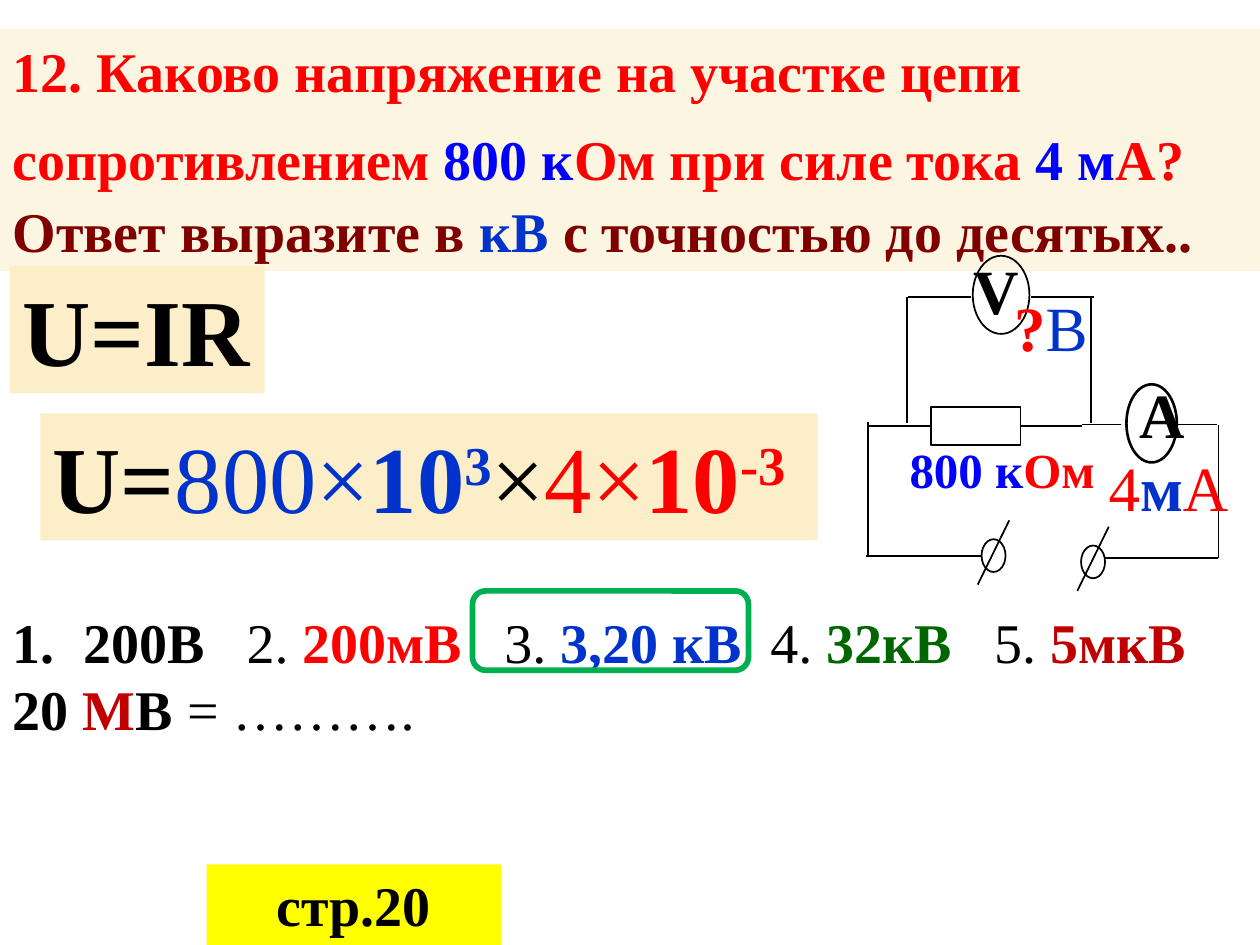
import pptx
import pptx.util
import pptx.dml.color
import pptx.enum.shapes
import pptx.enum.text
import pptx.oxml
import pptx.oxml.ns

Inches = pptx.util.Inches
Pt = pptx.util.Pt
KIND = pptx.enum.shapes.MSO_SHAPE
ALIGN = pptx.enum.text.PP_ALIGN
ANCHOR = pptx.enum.text.MSO_ANCHOR
FONT = "Times New Roman"
BLACK, RED, BLUE, NAVY = "000000", "FF0000", "0000FF", "0033CC"
MAROON, GREEN, BRICK = "800000", "006600", "C00000"
CREAM = "FBEEC9"


def color(code):
    return pptx.dml.color.RGBColor.from_string(code)


def element(parent, tag, **attrs):
    node = pptx.oxml.ns.qn("a:" + tag)
    child = parent.makeelement(node, attrs)
    parent.append(child)
    return child


def place(shape, left, top, width, height):
    shape.left, shape.top = Inches(left), Inches(top)
    shape.width, shape.height = Inches(width), Inches(height)


def write(para, size, *parts):
    """Each part is (text, colour, bold) and, if needed, a dict of run attributes."""
    for text, code, bold, *extra in parts:
        run = para.add_run()
        run.text = text
        font = run.font
        font.name, font.bold = FONT, bold
        font.size = Pt(size)
        font.color.rgb = color(code)
        for attrs in extra:
            props = run.font._element
            for name, value in attrs.items():
                if name == "size":
                    font.size = Pt(value)
                else:
                    props.set(name, value)


def draw(slide, kind, box, fill=None, line=None, width=1):
    shape = slide.shapes.add_shape(kind, *map(Inches, box))
    shape.shadow.inherit = False
    if fill:
        shape.fill.solid()
        shape.fill.fore_color.rgb = color(fill)
    else:
        shape.fill.background()
    if line:
        shape.line.color.rgb = color(line)
        shape.line.width = Pt(width)
    else:
        shape.line.fill.background()
    return shape


def wire(slide, x1, y1, x2, y2):
    line = slide.shapes.add_connector(
        pptx.enum.shapes.MSO_CONNECTOR.STRAIGHT, *map(Inches, (x1, y1, x2, y2)))
    line.line.color.rgb = color(BLACK)
    line.line.width = Pt(1)
    element(line._element.spPr, "effectLst")
    return line


def label(slide, box, size, *parts, after=0):
    shape = slide.shapes.add_textbox(*map(Inches, box))
    shape.text_frame.word_wrap = True
    para = shape.text_frame.paragraphs[0]
    para.space_after = Pt(after)
    write(para, size, *parts)
    return shape


def panel(slide, box, size, fill, align, *parts):
    shape = draw(slide, KIND.RECTANGLE, box, fill)
    frame = shape.text_frame
    frame.vertical_anchor = ANCHOR.TOP
    frame.paragraphs[0].alignment = align
    write(frame.paragraphs[0], size, *parts)


def question(slide, box):
    title = slide.shapes.title
    place(title, *box)
    title.fill.solid()
    title.fill.fore_color.rgb = color("F8E19F")
    tint = title._element.spPr.find(".//" + pptx.oxml.ns.qn("a:srgbClr"))
    element(tint, "alpha", val="30000")
    frame = title.text_frame
    frame.auto_size = pptx.enum.text.MSO_AUTO_SIZE.NONE
    frame.vertical_anchor = ANCHOR.MIDDLE
    para = frame.paragraphs[0]
    para.alignment = ALIGN.LEFT
    write(para, 32,
          ("12. Каково напряжение на участке цепи сопротивлением ", RED, True),
          ("800 к", BLUE, True), ("Ом при силе тока ", RED, True),
          ("4 м", BLUE, True), ("А?", RED, True),
          (" ", MAROON, True, {"size": 44}),
          ("Ответ выразите в ", MAROON, True), ("кВ", NAVY, True),
          (" с точностью до десятых..", MAROON, True))


def answers(slide, box):
    body = slide.placeholders[1]
    place(body, *box)
    frame = body.text_frame
    frame.auto_size = pptx.enum.text.MSO_AUTO_SIZE.NONE
    first, second = frame.paragraphs[0], frame.add_paragraph()
    for para in (first, second):
        para.space_before = Pt(0)
        props = para._p.get_or_add_pPr()
        props.set("marL", str(Inches(0.56)))
        props.set("indent", str(Inches(-0.56)))
    element(first._p.pPr, "buFont", typeface="+mj-lt")
    element(first._p.pPr, "buAutoNum", type="arabicPeriod")
    element(second._p.pPr, "buNone")
    wide = (" ", BLACK, False, {"spc": "1600"})
    near = (" ", BLACK, False, {"spc": "800"})
    write(first, 32, ("200В", BLACK, True), wide,
          ("2. ", BLACK, False), ("200мВ", RED, True), wide,
          ("3. ", BLACK, False), ("3,20 кВ", NAVY, True), near,
          ("4. ", BLACK, False), ("32кВ", GREEN, True), wide,
          ("5. ", BLACK, False), ("5мкВ", BRICK, True))
    write(second, 32, ("20 ", BLACK, True), ("М", BRICK, True),
          ("В", BLACK, True), (" = ……….", BLACK, False))


def circuit(slide, left, top):
    def at(x, y, *size):
        return (left + x, top + y, *size)

    def link(x1, y1, x2, y2):
        return wire(slide, *at(x1, y1), *at(x2, y2))

    def terminal(x, y):
        draw(slide, KIND.OVAL, at(x, y, 0.19, 0.26), "FFFFFF", BLACK)
        link(x - 0.03, y + 0.36, x + 0.22, y - 0.15)

    resistor = draw(slide, KIND.RECTANGLE, at(0.52, 1.28, 0.71, 0.3), None, BLACK)
    link(0.52, 1.43, 0.03, 1.43).begin_connect(resistor, 1)
    link(1.72, 1.43, 1.23, 1.43).end_connect(resistor, 3)
    meter = label(slide, at(1.82, 0.98, 0.95, 1.34), 36, ("А", BLACK, True), after=10)
    meter.text_frame.margin_left = Inches(0.35)
    draw(slide, KIND.OVAL, at(2.07, 1.1, 0.4, 0.62), None, BLACK, 1.5)
    label(slide, at(0.76, 0, 0.78, 0.98), 36, ("V", BLACK, True), after=10)
    draw(slide, KIND.OVAL, at(0.85, 0.08, 0.45, 0.62), None, BLACK)
    for ends in ((2.03, 1.42, 1.72, 1.42), (2.79, 1.42, 2.48, 1.42),
                 (1.31, 0.41, 1.81, 0.41), (0.34, 0.41, 0.84, 0.41),
                 (0.33, 0.41, 0.33, 1.41), (1.79, 0.41, 1.79, 1.41),
                 (2.8, 1.42, 2.8, 2.48), (0.02, 1.4, 0.02, 2.46),
                 (2.8, 2.48, 1.8, 2.48), (1, 2.46, 0, 2.46)):
        link(*ends)
    terminal(1.71, 2.38)
    terminal(0.92, 2.33)
    label(slide, at(1.08, 0.29, 0.98, 0.82), 36,
          ("?", RED, True), ("В", NAVY, False), after=10)
    label(slide, at(1.83, 1.56, 1.23, 0.82), 36,
          ("4", RED, False), ("м", NAVY, True), ("А", RED, False), after=10)
    label(slide, at(0.25, 1.49, 1.79, 0.57), 28,
          ("800 к", BLUE, True), ("Ом", RED, True))


def main():
    deck = pptx.Presentation()
    deck.slide_width, deck.slide_height = Inches(10), Inches(7.5)
    slide = deck.slides.add_slide(deck.slide_layouts[1])
    question(slide, (0, 0.23, 10, 1.92))
    answers(slide, (0, 4.77, 10, 1.18))
    circuit(slide, 6.87, 1.95)
    panel(slide, (0.08, 2.11, 2.02, 1.01), 54, CREAM, ALIGN.LEFT,
          ("U=IR", BLACK, True))
    power = {"baseline": "30000"}
    panel(slide, (0.32, 3.28, 6.17, 1.01), 54, CREAM, ALIGN.LEFT,
          ("U=", BLACK, True), ("800×", NAVY, False), ("10", NAVY, True),
          ("3", NAVY, True, power), ("×", BLACK, False), ("4×", RED, False),
          ("10", RED, True), ("-3", RED, True, power))
    draw(slide, KIND.ROUNDED_RECTANGLE, (3.75, 4.69, 2.19, 0.63), None, "00B050", 3.25)
    panel(slide, (1.64, 6.86, 2.34, 0.64), 32, "FFFF00", ALIGN.CENTER,
          ("стр.20", BLACK, True))
    deck.save("out.pptx")


if __name__ == "__main__":
    main()
